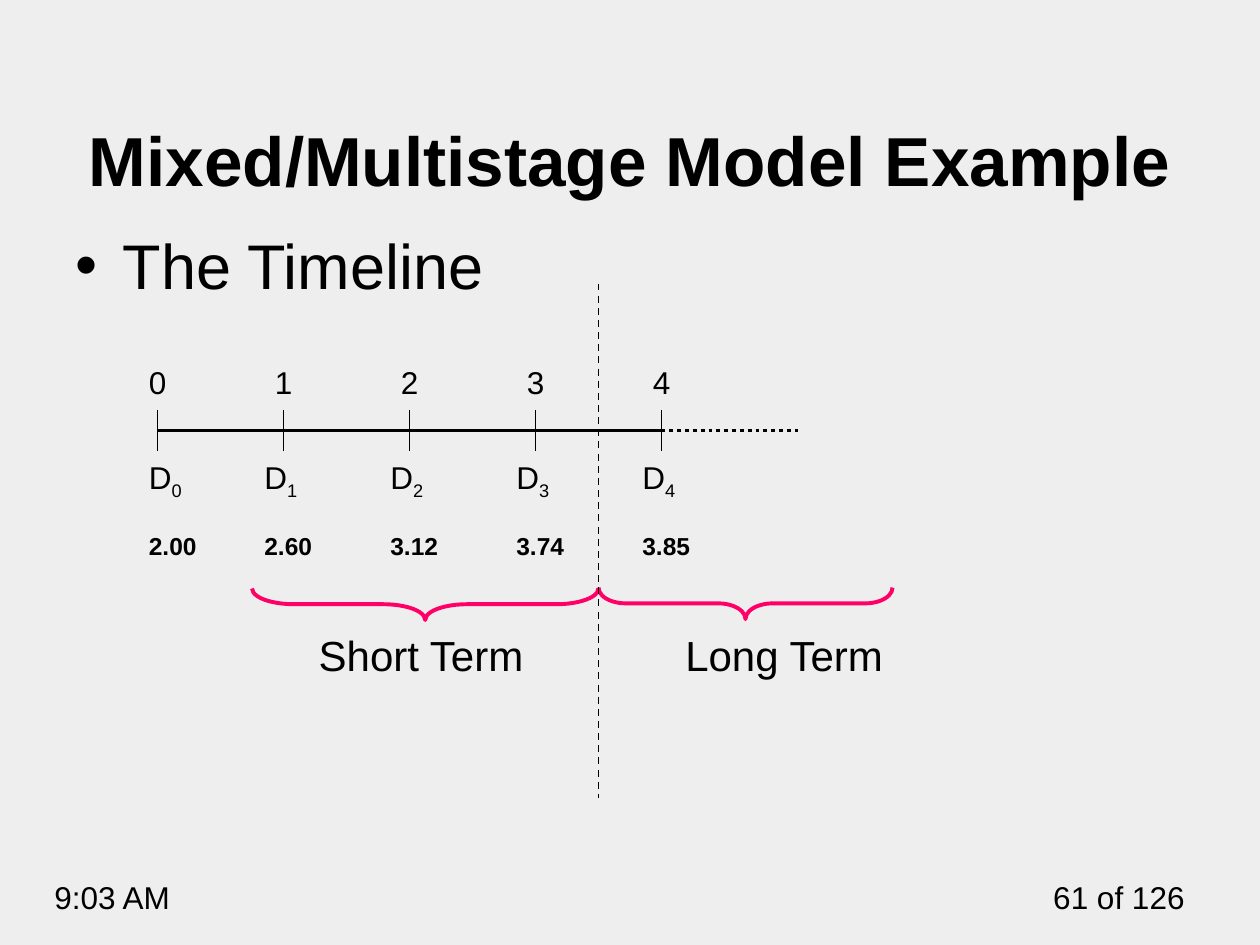
from lxml.etree import SubElement
from pptx import Presentation
from pptx.dml.color import RGBColor
from pptx.enum.dml import MSO_LINE
from pptx.enum.shapes import MSO_CONNECTOR, MSO_SHAPE
from pptx.enum.text import MSO_ANCHOR, PP_ALIGN
from pptx.oxml.ns import qn
from pptx.util import Pt

TITLE = "Mixed/Multistage Model Example"
BULLET = "The Timeline"
DIVIDENDS = ["2.00", "2.60", "3.12", "3.74", "3.85"]
# label, label left, brace left, brace right, brace top, brace curve
STAGES = [
    ("Short Term", 175, 144, 342, 336.25, 1.325),
    ("Long Term", 384.5, 342, 510, 335.75, 0.863),
]
# text, left, width, alignment
FOOTERS = [
    ("9:03 AM", 24, 114, PP_ALIGN.LEFT),
    ("61 of 126", 576, 108, PP_ALIGN.RIGHT),
]
BLACK, PINK, GRAY = "000000", "FF0066", "EEEEEE"
AXIS_LEFT, AXIS_Y, STEP, TICK = 90, 246, 72, 12
BRACE_DEPTH = 18


def rgb(value):
    return RGBColor.from_string(value)


def add_run(p, text, size, bold=False):
    r = p.add_run()
    r.text = text
    for name, value in {"name": "Arial", "size": Pt(size), "bold": bold}.items():
        setattr(r.font, name, value)
    r.font.color.rgb = rgb(BLACK)
    return r


def add_text(slide, text, left, top, width, height, size, bold=False,
             align=PP_ALIGN.LEFT):
    """Add a one-paragraph text box and return its paragraph."""
    box = slide.shapes.add_textbox(Pt(left), Pt(top), Pt(width), Pt(height))
    tf = box.text_frame
    tf.word_wrap = True
    p = tf.paragraphs[0]
    p.alignment = align
    add_run(p, text, size, bold)
    return p


def add_line(slide, x1, y1, x2, y2, width, dash=None):
    line = slide.shapes.add_connector(
        MSO_CONNECTOR.STRAIGHT, Pt(x1), Pt(y1), Pt(x2), Pt(y2))
    line.line.color.rgb = rgb(BLACK)
    line.line.width = Pt(width)
    if dash:
        line.line.dash_style = dash
    SubElement(line._element.spPr, qn("a:effectLst"))


def add_brace(slide, left, right, top, curve):
    """Add a brace that opens upwards: a left brace turned about its centre."""
    length = right - left
    x = (left + right - BRACE_DEPTH) / 2
    y = top + (BRACE_DEPTH - length) / 2
    sp = slide.shapes.add_shape(
        MSO_SHAPE.LEFT_BRACE, Pt(x), Pt(y), Pt(BRACE_DEPTH), Pt(length))
    sp.rotation = 270
    sp.adjustments[0] = curve
    sp.adjustments[1] = 0.5
    sp.shadow.inherit = False
    sp.fill.background()
    sp.line.color.rgb = rgb(PINK)
    sp.line.width = Pt(2.25)


def add_title(slide):
    title = slide.shapes.title
    bounds = {"left": 36, "top": 28, "width": 648, "height": 90}
    for name, value in bounds.items():
        setattr(title, name, Pt(value))
    tf = title.text_frame
    tf.word_wrap = True
    tf.vertical_anchor = MSO_ANCHOR.BOTTOM
    p = tf.paragraphs[0]
    p.alignment = PP_ALIGN.CENTER
    add_run(p, TITLE, 39.6, True)


def add_bullet(slide):
    p = add_text(slide, BULLET, 36, 126, 648, 50, 36)
    pPr = p._p.get_or_add_pPr()
    pPr.set("marL", str(Pt(27)))
    pPr.set("indent", str(-Pt(27)))
    SubElement(pPr, qn("a:buFont"), typeface="Arial")
    SubElement(pPr, qn("a:buChar"), char="•")


def add_timeline(slide):
    axis_right = AXIS_LEFT + STEP * (len(DIVIDENDS) - 1)
    add_line(slide, AXIS_LEFT, AXIS_Y, axis_right, AXIS_Y, 2.25)
    add_line(slide, axis_right, AXIS_Y, 456, AXIS_Y, 2.25, MSO_LINE.ROUND_DOT)
    for i, dividend in enumerate(DIVIDENDS):
        x = AXIS_LEFT + STEP * i
        add_line(slide, x, AXIS_Y - TICK, x, AXIS_Y + TICK, 1)
        add_text(slide, str(i), x - 12, 204, 24, 29, 18)
        left = x - (18 if i else 12)
        p = add_text(slide, "D", left, 258, 42, 29, 18)
        subscript = add_run(p, str(i), 18)
        subscript._r.get_or_add_rPr().set("baseline", "-25000")
        add_text(slide, dividend, left, 300, 42, 24, 14, True)


def main():
    prs = Presentation()
    prs.slide_width, prs.slide_height = Pt(720), Pt(540)
    slide = prs.slides.add_slide(prs.slide_layouts[5])
    slide.background.fill.solid()
    slide.background.fill.fore_color.rgb = rgb(GRAY)

    add_title(slide)
    add_bullet(slide)
    add_timeline(slide)
    for label, label_left, left, right, top, curve in STAGES:
        add_brace(slide, left, right, top, curve)
        add_text(slide, label, label_left, 356, 140, 36, 24)
    add_line(slide, 342, 162, 342, 456, 1, MSO_LINE.DASH)
    for text, left, width, align in FOOTERS:
        add_text(slide, text, left, 498, width, 29, 18, align=align)
    prs.save("out.pptx")


if __name__ == "__main__":
    main()
